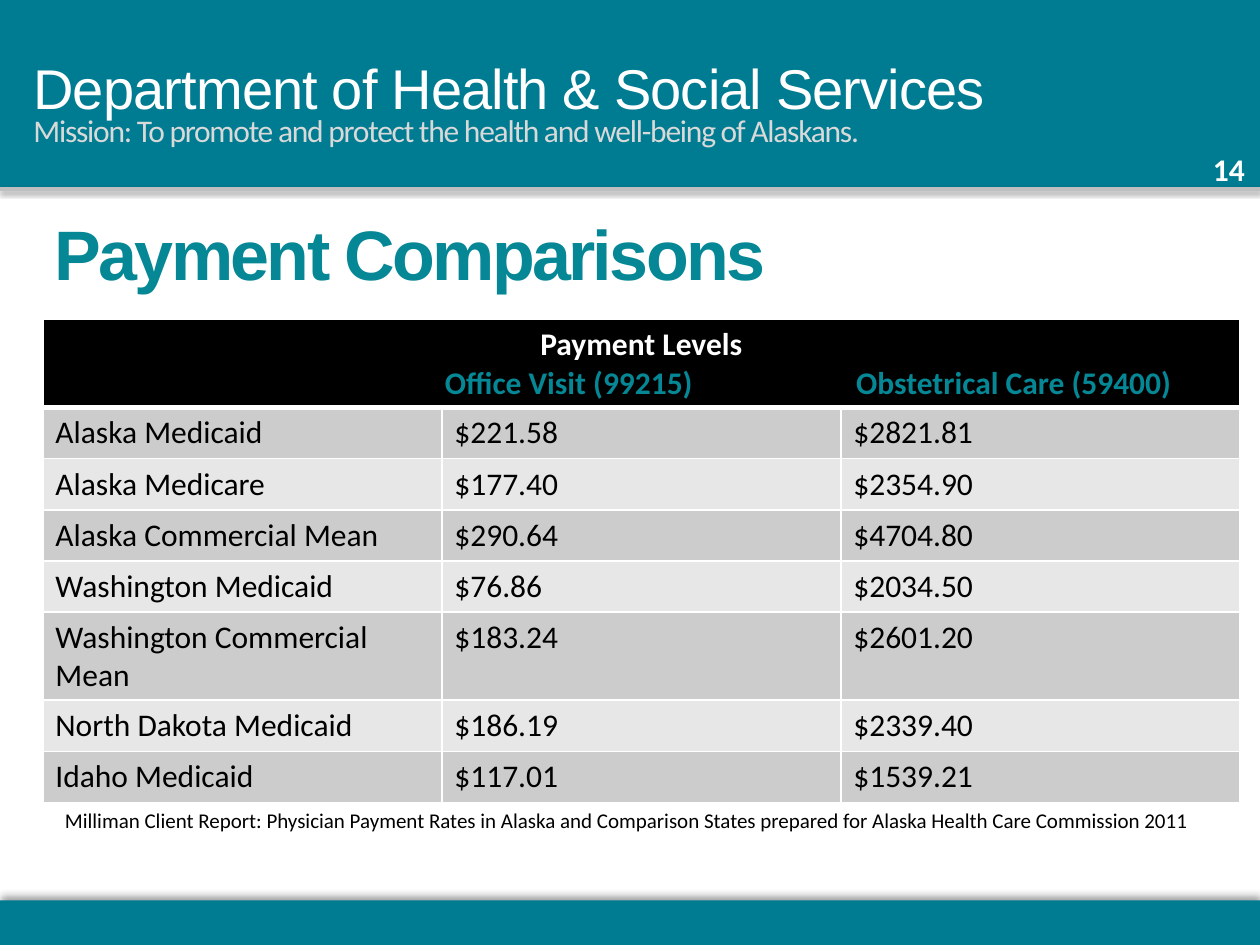
from lxml.etree import SubElement
from pptx import Presentation
from pptx.dml.color import RGBColor
from pptx.enum.shapes import MSO_CONNECTOR, MSO_SHAPE
from pptx.enum.text import MSO_ANCHOR, PP_ALIGN
from pptx.oxml.ns import qn
from pptx.util import Pt

TEAL, INK, WHITE, BLACK = "007C92", "058795", "FFFFFF", "000000"
BANDS = "CCCCCC", "E7E7E7"
TABS = 222.5, 457.5
ROWS = [
    ("Alaska Medicaid", "$221.58", "$2821.81"),
    ("Alaska Medicare", "$177.40", "$2354.90"),
    ("Alaska Commercial Mean", "$290.64", "$4704.80"),
    ("Washington Medicaid", "$76.86", "$2034.50"),
    ("Washington Commercial Mean", "$183.24", "$2601.20"),
    ("North Dakota Medicaid", "$186.19", "$2339.40"),
    ("Idaho Medicaid", "$117.01", "$1539.21"),
]


def paint(fill, color):
    fill.solid()
    fill.fore_color.rgb = RGBColor.from_string(color)


def style(para, size, color, face="Calibri", bold=False, space=0):
    font = para.font
    font.size, font.name, font.bold = Pt(size), face, bold
    paint(font.fill, color)
    if space:
        props = para._p.get_or_add_pPr().get_or_add_defRPr()
        props.set("spc", str(round(space * 100)))


def shade(shape, alpha, blur, dist, angle):
    effect = SubElement(shape._element.spPr, qn("a:effectLst"))
    shadow = SubElement(effect, qn("a:outerShdw"), blurRad=str(Pt(blur)),
                        dist=str(Pt(dist)), dir=str(angle * 60000),
                        algn="t", rotWithShape="0")
    tint = SubElement(shadow, qn("a:srgbClr"), val=BLACK)
    SubElement(tint, qn("a:alpha"), val=str(alpha * 1000))


def add_band(slide, top, height):
    band = slide.shapes.add_shape(MSO_SHAPE.RECTANGLE, 0, Pt(top), Pt(720), Pt(height))
    paint(band.fill, TEAL)
    band.line.fill.background()
    return band


def add_rule(slide, top):
    rule = slide.shapes.add_connector(MSO_CONNECTOR.STRAIGHT, 0, Pt(top), Pt(720), Pt(top))
    paint(rule.line.fill, "BFBFBF")
    rule.line.width = Pt(2)
    return rule


def add_text(slide, text, box, size, color, wrap=True, **look):
    frame = slide.shapes.add_textbox(*map(Pt, box)).text_frame
    frame.word_wrap = wrap
    frame.text = text
    style(frame.paragraphs[0], size, color, **look)


def set_title(slide, text):
    title = slide.shapes.title
    title.left, title.top, title.width, title.height = map(Pt, (24, 114, 684, 60))
    frame = title.text_frame
    frame.text = text
    frame.vertical_anchor = MSO_ANCHOR.MIDDLE
    para = frame.paragraphs[0]
    para.alignment = PP_ALIGN.LEFT
    style(para, 40, INK, "Arial", True, -1.5)


def set_cell(cell, color, top=1, base=1):
    props = cell._tc.get_or_add_tcPr()
    for side, width in zip("LRTB", (1, 1, top, base)):
        edge = SubElement(props, qn("a:ln" + side), w=str(Pt(width)))
        fill = SubElement(edge, qn("a:solidFill"))
        SubElement(fill, qn("a:srgbClr"), val=WHITE)
    paint(cell.fill, color)


def set_head(table):
    for cell in table.rows[0].cells:
        set_cell(cell, BLACK, base=3)
    head = table.cell(0, 0)
    head.merge(table.cell(0, 2))
    frame = head.text_frame
    frame.text = "Payment Levels\n\tOffice Visit (99215)\tObstetrical Care (59400)"
    first, second = frame.paragraphs
    first.alignment = PP_ALIGN.CENTER
    second.alignment = PP_ALIGN.LEFT
    stops = SubElement(second._p.get_or_add_pPr(), qn("a:tabLst"))
    for stop in TABS:
        SubElement(stops, qn("a:tab"), pos=str(Pt(stop)), algn="l")
    style(first, 18, WHITE, bold=True)
    style(second, 18, INK, bold=True)


def add_rates(slide):
    count = len(ROWS) + 1
    table = slide.shapes.add_table(count, 3, Pt(24.5), Pt(182.5), Pt(684), Pt(29.2 * count)).table
    for col in table.columns:
        col.width = Pt(228)
    set_head(table)
    for i, row in enumerate(ROWS):
        for j, text in enumerate(row):
            cell = table.cell(i + 1, j)
            set_cell(cell, BANDS[i % 2], top=1 if i else 3)
            cell.text = text
            style(cell.text_frame.paragraphs[0], 18, BLACK)


def main():
    deck = Presentation()
    deck.slide_width, deck.slide_height = Pt(720), Pt(540)
    slide = deck.slides.add_slide(deck.slide_layouts[5])
    shade(add_band(slide, 514.5, 25.5), 40, 4, 3, 270)
    add_band(slide, 0, 108).shadow.inherit = False
    shade(add_rule(slide, 108), 38, 3.1, 1.6, 90)
    add_text(slide, "Department of Health & Social Services", (12, 27, 606, 42),
             32, WHITE, face="Arial", space=-0.5)
    add_text(slide, "Mission: To promote and protect the health and well-being of Alaskans.",
             (12, 60, 495, 51), 18, "D9D9D9", wrap=False, space=-0.7)
    add_text(slide, "14", (686, 82, 40, 29), 18, WHITE, bold=True)
    set_title(slide, "Payment Comparisons")
    add_rates(slide)
    add_text(slide, "Milliman Client Report: Physician Payment Rates in Alaska and Comparison "
             "States prepared for Alaska Health Care Commission 2011",
             (30, 458, 672, 22), 12, BLACK)
    deck.save("out.pptx")


if __name__ == "__main__":
    main()
